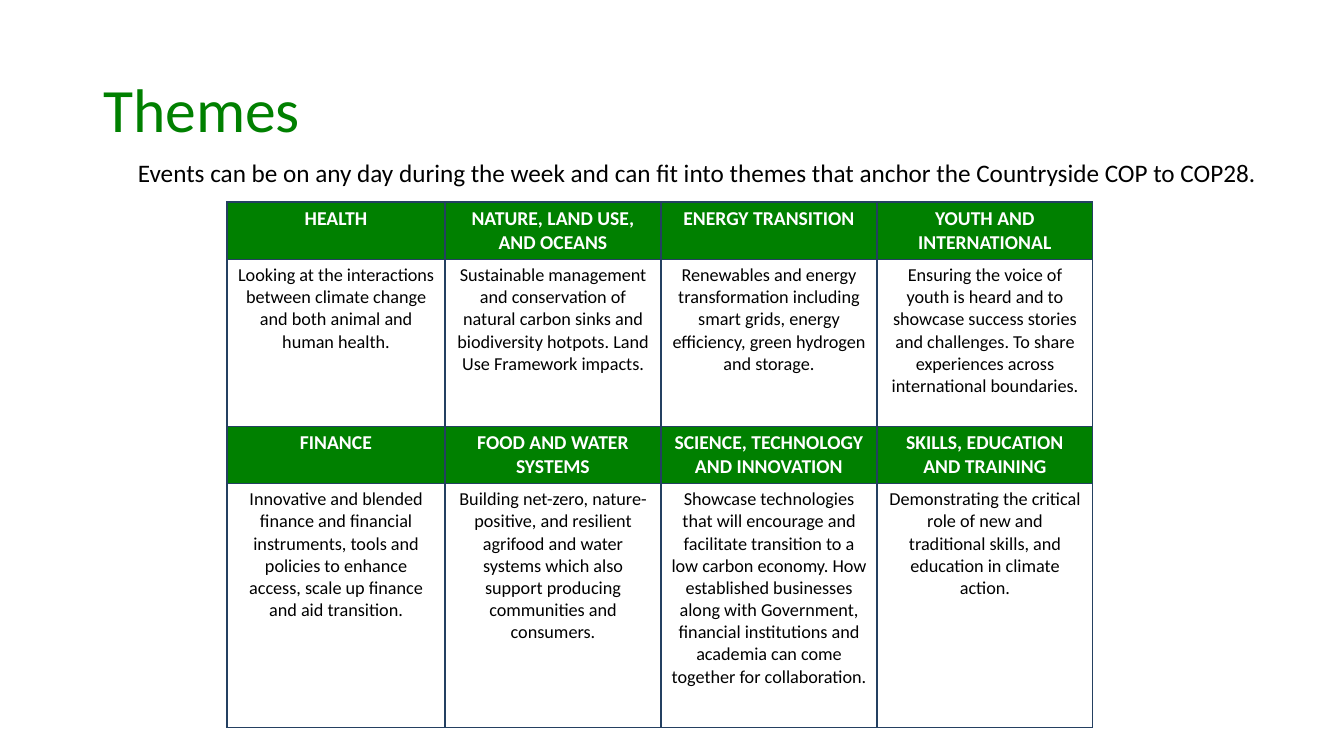
import pptx
import pptx.dml.color
import pptx.enum.text
import pptx.oxml
import pptx.oxml.ns
import pptx.util

PX = 914400 / 100.8
COLOURS = {"green": "008000", "navy": "244061", "black": "000000", "white": "FFFFFF"}
HEADER_HEIGHT = 57
COLUMN_WIDTHS = [218, 216, 216, 216]

# Each band is a body row height and its (theme, description) pairs
BANDS = [
    (167, [
        ("HEALTH",
         "Looking at the interactions between climate change and both animal and human health."),
        ("NATURE, LAND USE, AND OCEANS",
         "Sustainable management and conservation of natural carbon sinks and biodiversity "
         "hotpots. Land Use Framework impacts."),
        ("ENERGY TRANSITION",
         "Renewables and energy transformation including smart grids, energy efficiency, "
         "green hydrogen and storage."),
        ("YOUTH AND INTERNATIONAL",
         "Ensuring the voice of youth is heard and to showcase success stories and challenges. "
         "To share experiences across international boundaries."),
    ]),
    (244, [
        ("FINANCE",
         "Innovative and blended finance and financial instruments, tools and policies to "
         "enhance access, scale up finance and aid transition."),
        ("FOOD AND WATER SYSTEMS",
         "Building net-zero, nature-positive, and resilient agrifood and water systems which "
         "also support producing communities and consumers."),
        ("SCIENCE, TECHNOLOGY AND INNOVATION",
         "Showcase technologies that will encourage and facilitate transition to a low carbon "
         "economy. How established businesses along with Government, financial institutions "
         "and academia can come together for collaboration."),
        ("SKILLS, EDUCATION AND TRAINING",
         "Demonstrating the critical role of new and traditional skills, and education in "
         "climate action."),
    ]),
]


def px(*lengths):
    return [pptx.util.Emu(round(length * PX)) for length in lengths]


def write(frame, text, size, colour, bold=False):
    frame.text = text
    para = frame.paragraphs[0]
    para.font.name = "Calibri"
    para.font.size = pptx.util.Pt(size)
    para.font.bold = bold
    para.font.color.rgb = pptx.dml.color.RGBColor.from_string(COLOURS[colour])
    return para


deck = pptx.Presentation()
deck.slide_width, deck.slide_height = px(1344, 756)
page = deck.slides.add_slide(deck.slide_layouts[5])

# Title
title = page.shapes.title
title.left, title.top, title.width, title.height = px(93, 40, 224, 146)
title.text_frame.vertical_anchor = pptx.enum.text.MSO_ANCHOR.MIDDLE
para = write(title.text_frame, "Themes", 44, "green")
para.alignment = pptx.enum.text.PP_ALIGN.LEFT
para.line_spacing = 0.9

# Introduction
intro = page.shapes.add_textbox(*px(128, 152, 1286, 68))
intro.text_frame.word_wrap = True
write(intro.text_frame,
      "Events can be on any day during the week and can fit into themes that anchor "
      "the Countryside COP to COP28.", 18, "black")

# Theme table
row_heights = [height for body_height, _ in BANDS for height in (HEADER_HEIGHT, body_height)]
table = page.shapes.add_table(
    len(row_heights), len(COLUMN_WIDTHS),
    *px(227, 202, sum(COLUMN_WIDTHS), sum(row_heights))).table
table.first_row = False
table.horz_banding = False
for column, width in zip(table.columns, px(*COLUMN_WIDTHS)):
    column.width = width
for row, height in zip(table.rows, px(*row_heights)):
    row.height = height

for band_index, (_, themes) in enumerate(BANDS):
    for column_index, theme in enumerate(themes):
        for part, text in enumerate(theme):
            is_header = part == 0
            cell = table.cell(2 * band_index + part, column_index)
            if is_header:
                para = write(cell.text_frame, text, 14, "white", True)
            else:
                para = write(cell.text_frame, text, 13, "black")
            para.alignment = pptx.enum.text.PP_ALIGN.CENTER

            # Cell borders come before the fill in the cell properties
            properties = cell._tc.get_or_add_tcPr()
            for side in "LRTB":
                properties.append(pptx.oxml.parse_xml(
                    f'<a:ln{side} {pptx.oxml.ns.nsdecls("a")} w="12700"><a:solidFill>'
                    f'<a:srgbClr val="{COLOURS["navy"]}"/></a:solidFill></a:ln{side}>'))
            if is_header:
                cell.fill.solid()
                cell.fill.fore_color.rgb = pptx.dml.color.RGBColor.from_string(COLOURS["green"])
            else:
                cell.fill.background()

deck.save("out.pptx")
